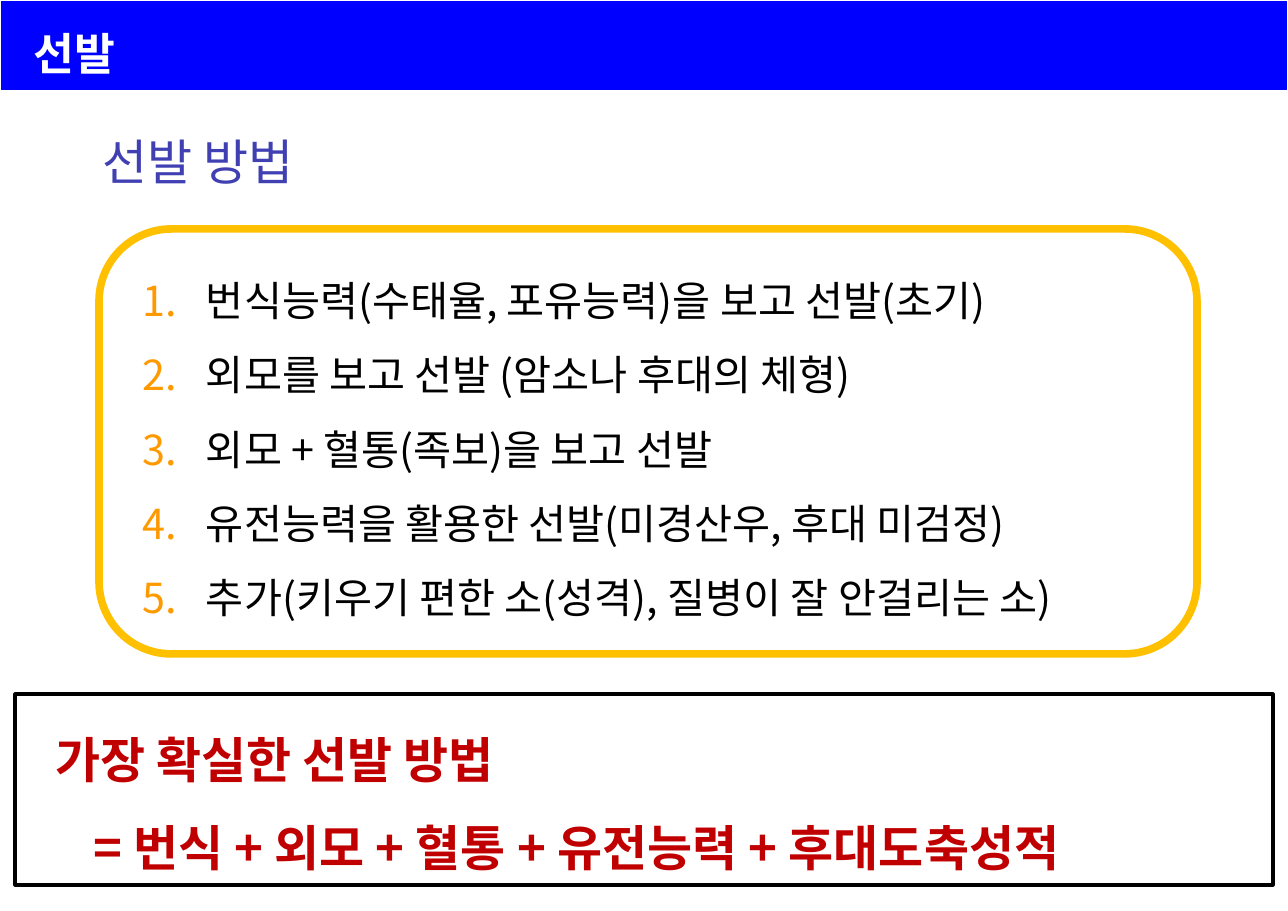
import pptx
import pptx.util
import pptx.dml.color
import pptx.enum.shapes
import pptx.enum.text
import pptx.oxml.ns
import lxml.etree

PX = 8298
FONT = "Noto Sans CJK KR"
RGBColor = pptx.dml.color.RGBColor
BLUE = RGBColor(0x00, 0x00, 0xFF)
INDIGO = RGBColor(0x40, 0x40, 0xB3)
ORANGE = RGBColor(0xFF, 0x99, 0x00)
GOLD = RGBColor(0xFF, 0xC0, 0x00)
RED = RGBColor(0xC0, 0x00, 0x00)
BLACK = RGBColor(0x00, 0x00, 0x00)
WHITE = RGBColor(0xFF, 0xFF, 0xFF)
qn = pptx.oxml.ns.qn


def set_frame(shape, left=12, top=6):
    frame = shape.text_frame
    frame.word_wrap = True
    frame.margin_left, frame.margin_right = left * PX, 12 * PX
    frame.margin_top = frame.margin_bottom = top * PX
    frame.vertical_anchor = pptx.enum.text.MSO_ANCHOR.TOP
    return frame


def add_run(paragraph, text, size, color, bold=False):
    paragraph.alignment = pptx.enum.text.PP_ALIGN.LEFT
    run = paragraph.add_run()
    run.text = text
    run.font.size = pptx.util.Pt(size)
    run.font.bold = bold
    run.font.color.rgb = color
    run.font.name = FONT
    properties = run.font._element
    east_asian = lxml.etree.SubElement(properties, qn("a:ea"))
    east_asian.set("typeface", FONT)


presentation = pptx.Presentation()
presentation.slide_width = 1288 * PX
presentation.slide_height = 911 * PX
slide = presentation.slides.add_slide(presentation.slide_layouts[6])
shapes = slide.shapes

methods = [
    "번식능력(수태율, 포유능력)을 보고 선발(초기)",
    "외모를 보고 선발 (암소나 후대의 체형)",
    "외모 + 혈통(족보)을 보고 선발",
    "유전능력을 활용한 선발(미경산우, 후대 미검정)",
    "추가(키우기 편한 소(성격), 질병이 잘 안걸리는 소)",
]
method_box = shapes.add_textbox(131 * PX, 244 * PX, 1105 * PX, 388 * PX)
frame = set_frame(method_box)
for index, method in enumerate(methods):
    paragraph = frame.paragraphs[0] if index == 0 else frame.add_paragraph()
    paragraph.line_spacing = 1.5
    properties = paragraph._p.get_or_add_pPr()
    properties.set("marL", str(63 * PX))
    properties.set("indent", str(-63 * PX))
    bullet_color = lxml.etree.SubElement(properties, qn("a:buClr"))
    lxml.etree.SubElement(bullet_color, qn("a:srgbClr")).set("val", str(ORANGE))
    lxml.etree.SubElement(properties, qn("a:buFont")).set("typeface", FONT)
    lxml.etree.SubElement(properties, qn("a:buAutoNum")).set("type", "arabicPeriod")
    add_run(paragraph, method, 27, BLACK)

heading_box = shapes.add_textbox(90 * PX, 118 * PX, 1117 * PX, 86 * PX)
frame = set_frame(heading_box)
frame.vertical_anchor = pptx.enum.text.MSO_ANCHOR.MIDDLE
add_run(frame.paragraphs[0], "선발 방법", 32, INDIGO)

conclusion_box = shapes.add_shape(
    pptx.enum.shapes.MSO_SHAPE.RECTANGLE, 15 * PX, 694 * PX, 1258 * PX, 191 * PX)
method_border = shapes.add_shape(
    pptx.enum.shapes.MSO_SHAPE.ROUNDED_RECTANGLE, 99 * PX, 229 * PX, 1098 * PX, 425 * PX)
method_border.adjustments[0] = 0.17
for shape, color, width in [(conclusion_box, BLACK, 2), (method_border, GOLD, 5)]:
    shape.shadow.inherit = False
    shape.fill.background()
    shape.line.color.rgb = color
    shape.line.width = pptx.util.Pt(width)

conclusion = [
    ("가장 확실한 선발 방법", 28),
    ("= 번식 + 외모 + 혈통 + 유전능력 + 후대도축성적", 66),
]
frame = set_frame(conclusion_box)
for index, (text, indent) in enumerate(conclusion):
    paragraph = frame.paragraphs[0] if index == 0 else frame.add_paragraph()
    paragraph.line_spacing = 1.5
    paragraph._p.get_or_add_pPr().set("marL", str(indent * PX))
    add_run(paragraph, text, 32, RED, True)

title_bar = shapes.add_table(1, 1, 0, 0, 1288 * PX, 91 * PX).table
cell = title_bar.cell(0, 0)
cell.fill.solid()
cell.fill.fore_color.rgb = BLUE

title_box = shapes.add_textbox(0, 26 * PX, 829 * PX, 54 * PX)
frame = set_frame(title_box, 34, 0)
add_run(frame.paragraphs[0], "선발", 29, WHITE, True)

presentation.save("out.pptx")
